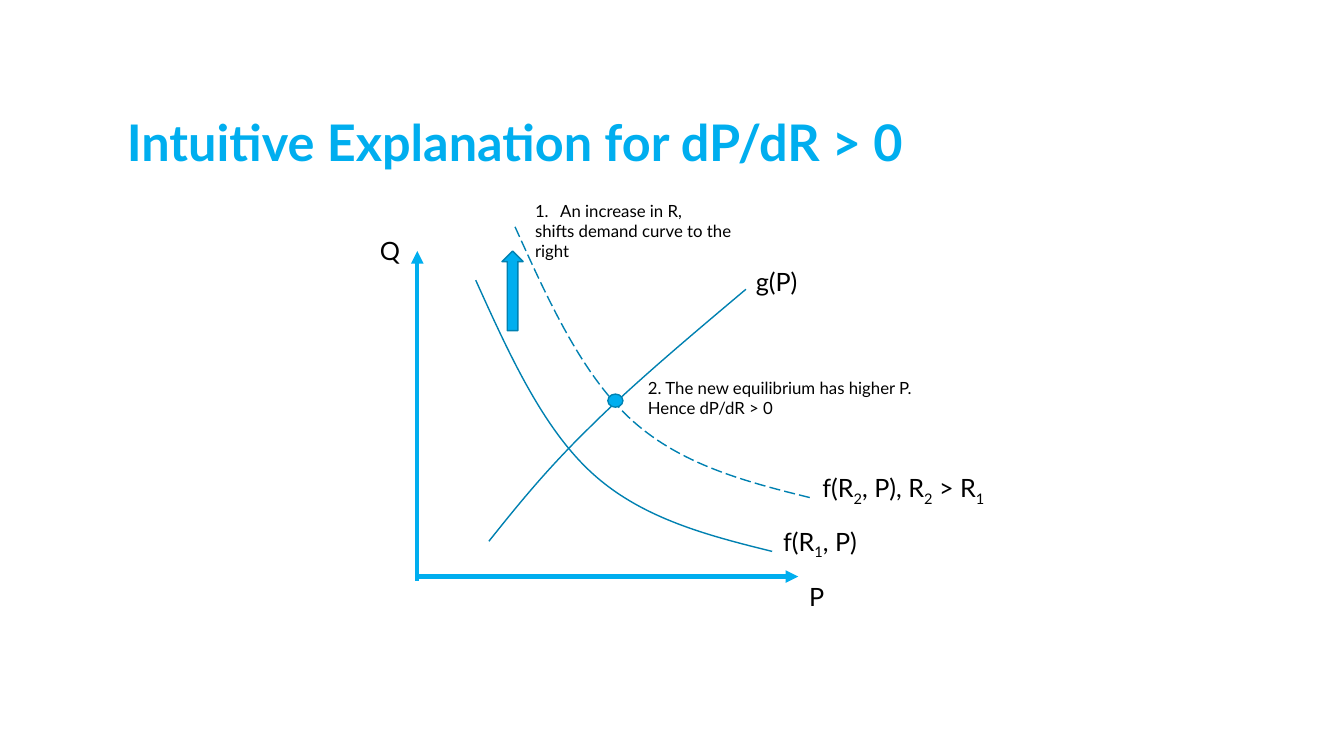
"""Draw the supply and demand slide that explains why dP/dR > 0."""
from lxml import etree
from pptx import Presentation
from pptx.dml.color import RGBColor
from pptx.enum.dml import MSO_LINE
from pptx.enum.shapes import MSO_CONNECTOR, MSO_SHAPE
from pptx.enum.text import MSO_ANCHOR
from pptx.oxml.ns import qn
from pptx.util import Pt

STRAIGHT = MSO_CONNECTOR.STRAIGHT
UP_ARROW, OVAL = MSO_SHAPE.UP_ARROW, MSO_SHAPE.OVAL
LONG_DASH = MSO_LINE.LONG_DASH
TOP, BOTTOM = MSO_ANCHOR.TOP, MSO_ANCHOR.BOTTOM

FONT = "Lato"
CYAN = RGBColor(0x00, 0xAE, 0xEF)
BLUE = RGBColor(0x00, 0x81, 0xB1)
BLACK = RGBColor(0x00, 0x00, 0x00)
WHITE = RGBColor(0xFF, 0xFF, 0xFF)

DEMAND = [(339.84, 200.16), (363.6, 252.72), (387.36, 305.28), (422.64, 337.68),
          (457.92, 370.08), (504.72, 382.32), (551.52, 393.84)]
SUPPLY = [(349.2, 386.64), (369.36, 361.44), (389.52, 336.24), (420.48, 306),
          (450.72, 275.76), (491.76, 241.2), (532.8, 206.64)]
DEMAND_SHIFT = (28.08, -38.16)


def style_span(span, size, color=BLACK, bold=False):
    """Give a run its font, size, colour and weight."""
    span.font.name = FONT
    span.font.size = Pt(size)
    span.font.color.rgb = color
    span.font.bold = bold


def add_box(page, left, top, width, height, wrap=True, anchor=TOP):
    """Add an empty text box and return its text frame."""
    box = page.shapes.add_textbox(Pt(left), Pt(top), Pt(width), Pt(height))
    box.text_frame.word_wrap = wrap
    box.text_frame.vertical_anchor = anchor
    return box.text_frame


def add_title(page, text):
    """Add the slide heading."""
    frame = add_box(page, 83.52, 41.76, 684, 84.24, anchor=BOTTOM)
    frame.text = text
    para = frame.paragraphs[0]
    para.line_spacing = 0.8
    style_span(para.runs[0], 36, CYAN, bold=True)


def add_label(page, left, top, width, *pieces):
    """Add a one-line label whose every second piece is a subscript."""
    para = add_box(page, left, top, width, 28.8, wrap=False).paragraphs[0]
    for index, piece in enumerate(pieces):
        span = para.add_run()
        span.text = piece
        style_span(span, 18)
        if index % 2:
            span._r.get_or_add_rPr().set("baseline", "-25000")


def add_note(page, left, top, width, text, numbered=False):
    """Add a small note, with its first paragraph numbered on request."""
    frame = add_box(page, left, top, width, 36)
    frame.text = text
    if numbered:
        props = frame.paragraphs[0]._p.get_or_add_pPr()
        props.set("marL", str(Pt(18)))
        props.set("indent", str(Pt(-18)))
        etree.SubElement(props, qn("a:buFont"), typeface="+mj-lt")
        etree.SubElement(props, qn("a:buAutoNum"), type="arabicPeriod")
    for para in frame.paragraphs:
        style_span(para.runs[0], 12)


def add_axis(page, start, end):
    """Add a thick axis with an arrowhead at its end."""
    axis = page.shapes.add_connector(STRAIGHT, *map(Pt, start + end))
    axis.line.color.rgb = CYAN
    axis.line.width = Pt(3)
    etree.SubElement(axis.line._get_or_add_ln(), qn("a:tailEnd"), type="triangle")
    etree.SubElement(axis._element.spPr, qn("a:effectLst"))


def add_curve(page, points, shift=(0, 0), dash=None):
    """Add an open cubic curve given by its end and control points."""
    start, *rest = [(Pt(x + shift[0]), Pt(y + shift[1])) for x, y in points]
    builder = page.shapes.build_freeform(*start)
    builder.add_line_segments(rest, close=False)
    curve = builder.convert_to_shape()
    outline = curve._element.spPr.find(".//" + qn("a:path"))
    lines = outline.findall(qn("a:lnTo"))
    for first in range(0, len(lines), 3):
        bend = etree.SubElement(outline, qn("a:cubicBezTo"))
        for line in lines[first:first + 3]:
            bend.append(line[0])
            outline.remove(line)
    curve.shadow.inherit = False
    curve.fill.background()
    curve.line.color.rgb = BLUE
    curve.line.width = Pt(1)
    if dash:
        curve.line.dash_style = dash


def add_marker(page, kind, left, top, width, height):
    """Add a filled preset shape with a thin outline."""
    marker = page.shapes.add_shape(kind, Pt(left), Pt(top), Pt(width), Pt(height))
    marker.shadow.inherit = False
    marker.fill.solid()
    marker.fill.fore_color.rgb = CYAN
    marker.line.color.rgb = BLUE
    marker.line.width = Pt(1)


def main():
    """Build the slide and save the deck."""
    deck = Presentation()
    deck.slide_width, deck.slide_height = Pt(960), Pt(540)
    page = deck.slides.add_slide(deck.slide_layouts[6])
    page.background.fill.solid()
    page.background.fill.fore_color.rgb = WHITE

    add_title(page, "Intuitive Explanation for dP/dR > 0")
    add_axis(page, (298.08, 411.84), (570.24, 411.84))
    add_axis(page, (298.08, 414.72), (298.08, 179.28))
    add_label(page, 570.96, 411.84, 25.92, "P")
    add_label(page, 264.24, 164.88, 25.92, "Q")

    add_curve(page, DEMAND)
    add_curve(page, SUPPLY)
    add_label(page, 532.8, 186.48, 45.36, "g(P)")
    add_label(page, 552.24, 372.24, 69.84, "f(R", "1", ", P)")
    add_curve(page, DEMAND, DEMAND_SHIFT, LONG_DASH)
    add_label(page, 580.32, 334.08, 135.36, "f(R", "2", ", P), R", "2", " > R", "1")

    add_marker(page, UP_ARROW, 358.56, 179.28, 15.12, 56.88)
    add_note(page, 375.12, 139.68, 180,
             "An increase in R,\nshifts demand curve to the right", numbered=True)
    add_marker(page, OVAL, 434.16, 281.52, 10.8, 9.36)
    add_note(page, 455.76, 266.4, 205.2,
             "2. The new equilibrium has higher P.\nHence dP/dR > 0")
    deck.save("out.pptx")


if __name__ == "__main__":
    main()
